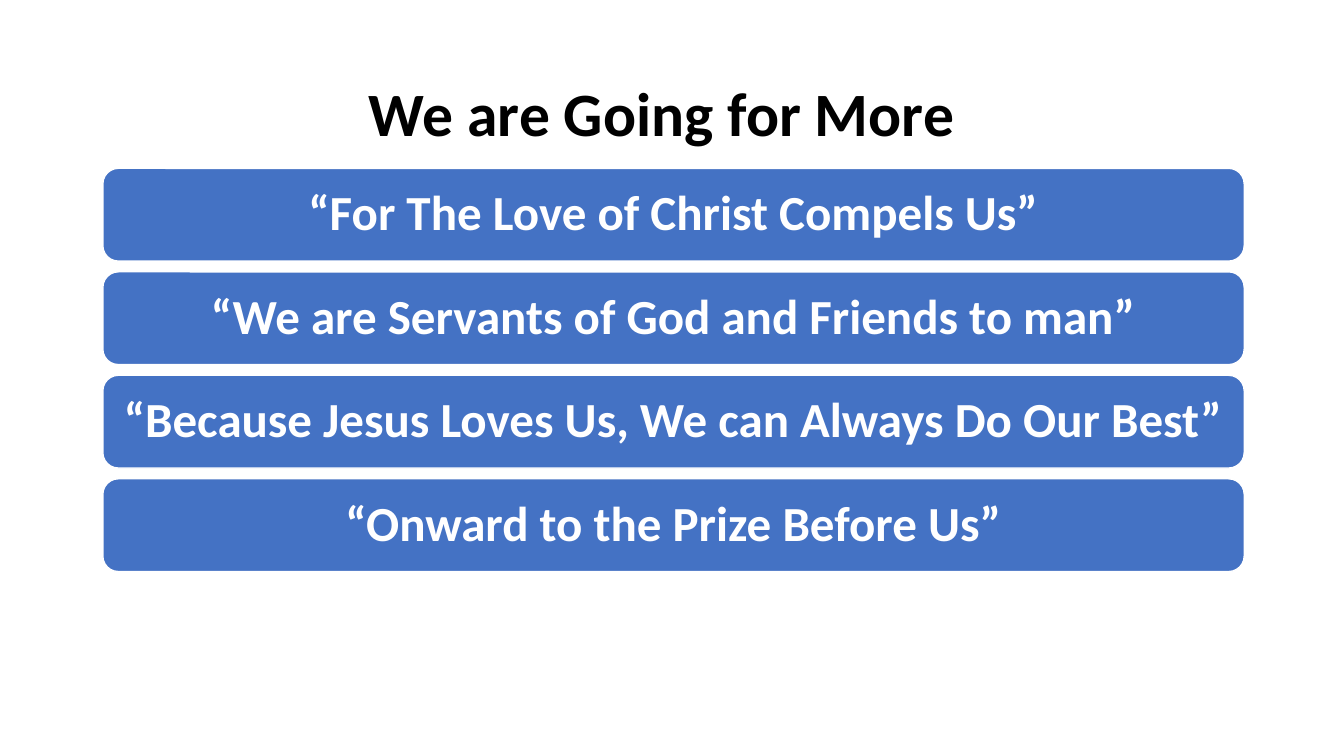
from pptx import Presentation
from pptx.dml.color import RGBColor
from pptx.enum.shapes import MSO_SHAPE as SHAPE
from pptx.enum.text import MSO_ANCHOR as ANCHOR, PP_ALIGN as ALIGN
from pptx.util import Pt

PX = 9144
COLORS = {"bar": "4472C4", "white": "FFFFFF", "title": "000000"}
FONT = "Calibri"
TITLE = "We are Going for More"
MOTTOS = [
    "“For The Love of Christ Compels Us”",
    "“We are Servants of God and Friends to man”",
    "“Because Jesus Loves Us, We can Always Do Our Best”",
    "“Onward to the Prize Before Us”",
]


def px(n):
    return round(n * PX)


def rgb(name):
    return RGBColor.from_string(COLORS[name])


def write(sp, text, size, color, align=ALIGN.LEFT, anchor=ANCHOR.TOP,
          spacing=1.0, inset_x=10, inset_y=5):
    tf = sp.text_frame
    tf.word_wrap = True
    tf.vertical_anchor = anchor
    tf.margin_left = tf.margin_right = px(inset_x)
    tf.margin_top = tf.margin_bottom = px(inset_y)
    p = tf.paragraphs[0]
    p.alignment = align
    p.line_spacing = spacing
    r = p.add_run()
    r.text = text
    r.font.name = FONT
    r.font.size = Pt(size)
    r.font.bold = True
    r.font.color.rgb = rgb(color)


def add_title(s, x, y, w, h):
    sp = s.shapes.add_textbox(px(x), px(y), px(w), px(h))
    write(sp, TITLE, 44, "title")


def add_mottos(s, x, y, w, h, bar_h=92):
    pitch = (h - bar_h) / (len(MOTTOS) - 1)
    for i, motto in enumerate(MOTTOS):
        sp = s.shapes.add_shape(SHAPE.ROUNDED_RECTANGLE, px(x),
                                px(y + i * pitch), px(w), px(bar_h))
        sp.shadow.inherit = False
        sp.fill.solid()
        sp.fill.fore_color.rgb = rgb("bar")
        sp.line.color.rgb = rgb("white")
        sp.line.width = Pt(1)
        write(sp, motto, 35, "white", align=ALIGN.CENTER,
              anchor=ANCHOR.MIDDLE, spacing=0.9, inset_x=15, inset_y=15)


def main():
    prs = Presentation()
    prs.slide_width = px(1333)
    prs.slide_height = px(750)
    s = prs.slides.add_slide(prs.slide_layouts[6])
    add_mottos(s, 102, 167, 1132, 400)
    add_title(s, 356, 69, 686, 158)
    prs.save("out.pptx")


if __name__ == "__main__":
    main()
